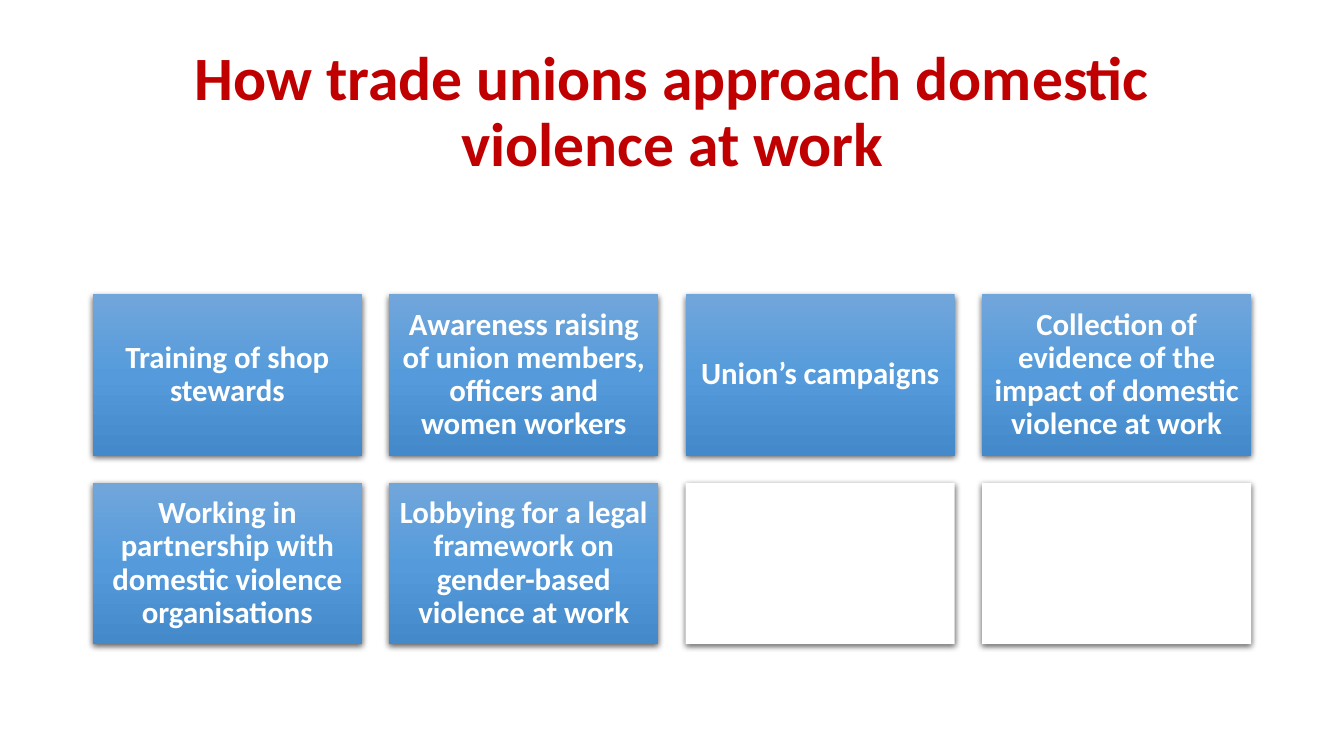
from copy import deepcopy
from lxml.etree import SubElement
from pptx import Presentation
from pptx.dml.color import RGBColor
from pptx.enum.shapes import MSO_SHAPE
from pptx.enum.text import MSO_ANCHOR, PP_ALIGN
from pptx.oxml.ns import qn
from pptx.util import Inches, Pt


def hue(code):
    return RGBColor.from_string(code)


def write(shape, text, size, color, inset):
    frame = shape.text_frame
    frame.word_wrap = True
    frame.vertical_anchor = MSO_ANCHOR.MIDDLE
    frame.margin_left = frame.margin_right = Inches(inset)
    frame.margin_top = frame.margin_bottom = Inches(inset)
    line = frame.paragraphs[0]
    line.alignment = PP_ALIGN.CENTER
    line.line_spacing = 0.9
    run = line.add_run()
    run.text = text
    run.font.name = "Calibri"
    run.font.size = Pt(size)
    run.font.bold = True
    run.font.color.rgb = hue(color)


deck = Presentation()
deck.slide_width = Inches(13.33)
deck.slide_height = Inches(7.5)
slide = deck.slides.add_slide(deck.slide_layouts[5])

left, top = 0.92, 2.92
wide, high, gap = 2.67, 1.6, 0.27
cols = 4

title = slide.shapes.title
title.left, title.top = Inches(left), Inches(0.4)
title.width, title.height = Inches(11.5), Inches(1.45)
write(title, "How trade unions approach domestic violence at work",
      size=44, color="C00000", inset=0.1)

blend = [(0, "71A6DB"), (0.5, "559BDB"), (1, "448ACA")]
actions = [
    "Training of shop stewards",
    "Awareness raising of union members, officers and women workers",
    "Union’s campaigns",
    "Collection of evidence of the impact of domestic violence at work",
    "Working in partnership with domestic violence organisations",
    "Lobbying for a legal framework on gender-based violence at work",
    "",
    "",
]

for index, action in enumerate(actions):
    row, col = divmod(index, cols)
    card = slide.shapes.add_shape(
        MSO_SHAPE.RECTANGLE,
        Inches(left + col * (wide + gap)), Inches(top + row * (high + gap)),
        Inches(wide), Inches(high))
    card.line.fill.background()
    if action:
        card.fill.gradient()
        card.fill.gradient_angle = 270
        stops = card.element.spPr.find(".//" + qn("a:gsLst"))
        stops.insert(1, deepcopy(stops[0]))
        for stop, (place, tint) in zip(card.fill.gradient_stops, blend):
            stop.position = place
            stop.color.rgb = hue(tint)
        write(card, action, size=22, color="FFFFFF", inset=0.09)
    else:
        card.fill.solid()
        card.fill.fore_color.rgb = hue("FFFFFF")

    card.shadow.inherit = False
    effects = card.element.spPr.find(qn("a:effectLst"))
    shade = SubElement(effects, qn("a:outerShdw"), blurRad=str(Pt(4.5)),
                       dist=str(Pt(1.5)), dir="5400000", algn="ctr",
                       rotWithShape="0")
    black = SubElement(shade, qn("a:srgbClr"), val="000000")
    SubElement(black, qn("a:alpha"), val="63000")

deck.save("out.pptx")
